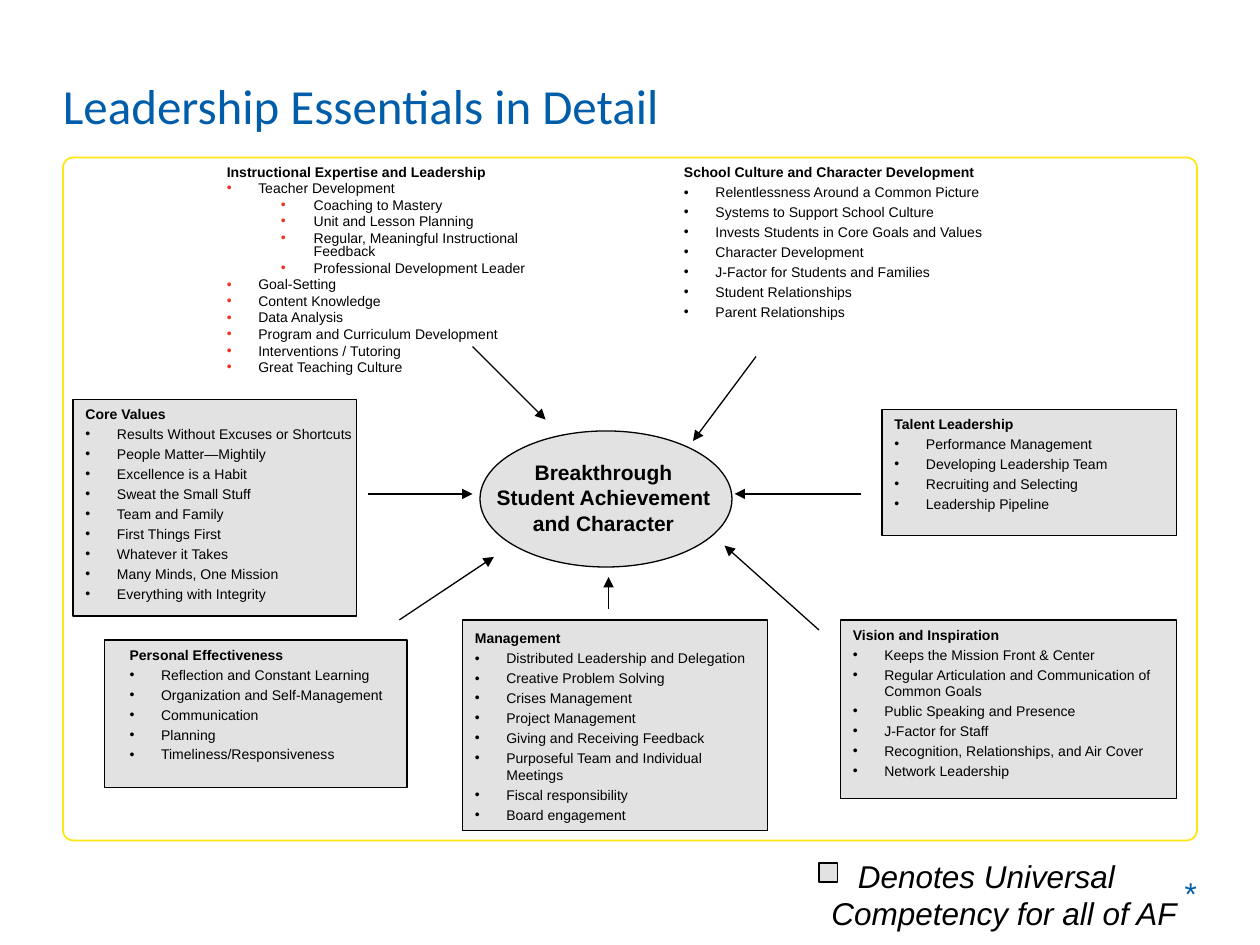
from dataclasses import dataclass

import pptx
import pptx.dml.color
import pptx.enum.shapes
import pptx.enum.text
import pptx.oxml.ns
import pptx.util
from lxml import etree

Inches = pptx.util.Inches
Pt = pptx.util.Pt
Shape = pptx.enum.shapes.MSO_SHAPE
Align = pptx.enum.text.PP_ALIGN
Anchor = pptx.enum.text.MSO_ANCHOR


@dataclass(frozen=True)
class Theme:
    blue: str = "005DAA"
    yellow: str = "FFE512"
    red: str = "EE3224"
    black: str = "000000"
    grey: str = "E2E2E2"
    heading_font: str = "Calibri"
    body_font: str = "Arial"
    title_size: float = 28
    note_size: float = 18
    goal_size: float = 12
    list_size: float = 8
    list_gap: float = 1.8
    outline: float = 0.75
    frame_line: float = 1


THEME = Theme()
INSETS = (0.1, 0.05, 0.1, 0.05)
TITLE_INSETS = (0, 0.05, 0, 0.05)

# Each competency: panel box, text box relative to the panel, heading, items
UNIVERSAL = [
    ((7, 3.25, 2.34, 1), (0, 0, 2.42, 1.33), "Talent Leadership", [
        "Performance Management", "Developing Leadership Team",
        "Recruiting and Selecting", "Leadership Pipeline"]),
    ((6.67, 4.92, 2.67, 1.42), (0, 0, 2.67, 1.01), "Vision and Inspiration", [
        "Keeps the Mission Front & Center",
        "Regular Articulation and Communication of Common Goals",
        "Public Speaking and Presence", "J-Factor for Staff",
        "Recognition, Relationships, and Air Cover", "Network Leadership"]),
    ((0.83, 5.08, 2.4, 1.17), (0.1, 0, 2.49, 1.11), "Personal Effectiveness", [
        "Reflection and Constant Learning", "Organization and Self-Management",
        "Communication", "Planning", "Timeliness/Responsiveness"]),
    ((0.58, 3.17, 2.25, 1.72), (0, 0, 2.5, 1.72), "Core Values", [
        "Results Without Excuses or Shortcuts", "People Matter—Mightily",
        "Excellence is a Habit", "Sweat the Small Stuff", "Team and Family",
        "First Things First", "Whatever it Takes", "Many Minds, One Mission",
        "Everything with Integrity"]),
    ((3.67, 4.92, 2.42, 1.67), (0, 0.03, 2.42, 1.39), "Management", [
        "Distributed Leadership and Delegation", "Creative Problem Solving",
        "Crises Management", "Project Management",
        "Giving and Receiving Feedback",
        "Purposeful Team and Individual Meetings",
        "Fiscal responsibility", "Board engagement"]),
]
# A nested list holds the sub-items of the item before it
INSTRUCTION = [
    "Teacher Development",
    ["Coaching to Mastery", "Unit and Lesson Planning",
     "Regular, Meaningful Instructional Feedback",
     "Professional Development Leader"],
    "Goal-Setting", "Content Knowledge", "Data Analysis",
    "Program and Curriculum Development", "Interventions / Tutoring",
    "Great Teaching Culture"]
CULTURE = [
    "Relentlessness Around a Common Picture",
    "Systems to Support School Culture",
    "Invests Students in Core Goals and Values", "Character Development",
    "J-Factor for Students and Families", "Student Relationships",
    "Parent Relationships"]
ARROWS = [
    ((6.83, 3.92), (5.83, 3.92)), ((6.5, 5), (5.75, 4.33)),
    ((4.83, 4.83), (4.83, 4.58)), ((3.17, 4.92), (3.92, 4.42)),
    ((2.92, 3.92), (3.75, 3.92)), ((3.75, 2.75), (4.33, 3.33)),
    ((6, 2.83), (5.5, 3.5))]


def rgb(value):
    return pptx.dml.color.RGBColor.from_string(value)


def within(box, offset):
    """Turn an offset box (left, top, width, height) into slide inches."""
    return (box[0] + offset[0], box[1] + offset[1], offset[2], offset[3])


def add_outline(slide, kind, box, fill=None, line=THEME.black,
                width=THEME.outline):
    outline = slide.shapes.add_shape(kind, *map(Inches, box))
    outline.shadow.inherit = False
    if fill:
        outline.fill.solid()
        outline.fill.fore_color.rgb = rgb(fill)
    else:
        outline.fill.background()
    outline.line.color.rgb = rgb(line)
    outline.line.width = Pt(width)
    return outline


def add_frame(slide, box, insets=INSETS, anchor=Anchor.TOP):
    frame = slide.shapes.add_textbox(*map(Inches, box)).text_frame
    frame.word_wrap = True
    frame.vertical_anchor = anchor
    (frame.margin_left, frame.margin_top,
     frame.margin_right, frame.margin_bottom) = map(Inches, insets)
    return frame


def add_run(paragraph, text, size, color=THEME.black, font=THEME.body_font,
            bold=False, italic=False):
    run = paragraph.add_run()
    run.text = text
    run.font.size = Pt(size)
    run.font.name = font
    run.font.bold = bold
    run.font.italic = italic
    run.font.color.rgb = rgb(color)


def indent(paragraph, left, first):
    properties = paragraph._p.get_or_add_pPr()
    properties.set("marL", str(Inches(left)))
    properties.set("indent", str(Inches(first)))
    return properties


def add_bullet(properties, color):
    qn = pptx.oxml.ns.qn
    bullet_color = etree.SubElement(properties, qn("a:buClr"))
    etree.SubElement(bullet_color, qn("a:srgbClr"), val=color)
    etree.SubElement(properties, qn("a:buFont"), typeface=THEME.body_font)
    etree.SubElement(properties, qn("a:buChar"), char="•")


def add_list(slide, box, items, heading=None, bullet=THEME.black, spacing=None,
             insets=INSETS):
    """Place an optional bold heading and its bulleted items in one box."""
    frame = add_frame(slide, box, insets)
    rows = [(heading, 0, False)] if heading else []
    for item in items:
        if isinstance(item, list):
            rows += [(sub_item, 1, True) for sub_item in item]
        else:
            rows.append((item, 0, True))
    for index, (text, level, bulleted) in enumerate(rows):
        row = frame.add_paragraph() if index else frame.paragraphs[0]
        row.level = level
        if spacing:
            row.line_spacing = spacing
        if index:
            row.space_before = Pt(THEME.list_gap)
        properties = indent(row, *((0.69, -0.26) if level else (0.25, -0.25)))
        if bulleted:
            add_bullet(properties, bullet)
        add_run(row, text, THEME.list_size, bold=not bulleted)


def add_universal_panel(slide, box, text_offset, heading, items):
    add_outline(slide, Shape.RECTANGLE, box, THEME.grey)
    add_list(slide, within(box, text_offset), items, heading)


def add_culture(slide, box):
    heading = add_frame(slide, within(box, (0, 0, 3.83, 0.44))).paragraphs[0]
    add_run(heading, "School Culture and Character Development",
            THEME.list_size, bold=True)
    add_list(slide, within(box, (0, 0.16, 3.15, 1.83)), CULTURE)


def add_goal(slide, box):
    add_outline(slide, Shape.OVAL, within(box, (0.06, 0, 2, 1.08)), THEME.grey)
    goal = add_frame(slide, within(box, (0, 0.18, 2.08, 0.7))).paragraphs[0]
    goal.alignment = Align.CENTER
    add_run(goal, "Breakthrough", THEME.goal_size, bold=True)
    goal.add_line_break()
    add_run(goal, "Student Achievement and Character", THEME.goal_size, bold=True)


def add_arrow(slide, start, end):
    arrow = slide.shapes.add_connector(
        pptx.enum.shapes.MSO_CONNECTOR.STRAIGHT, *map(Inches, start + end))
    arrow.line.color.rgb = rgb(THEME.black)
    arrow.line.width = Pt(THEME.outline)
    qn = pptx.oxml.ns.qn
    etree.SubElement(arrow.line._get_or_add_ln(), qn("a:tailEnd"), type="triangle")
    etree.SubElement(arrow._element.spPr, qn("a:effectLst"))


def add_legend(slide, box):
    note = add_frame(slide, box).paragraphs[0]
    indent(note, 0, 0.21)
    add_run(note, "Denotes Universal Competency for all of AF",
            THEME.note_size, italic=True)
    add_outline(slide, Shape.RECTANGLE, within(box, (0, 0.1, 0.15, 0.15)), THEME.grey)


def add_page_furniture(slide, box):
    """Place the title, the rounded frame and the corner mark."""
    border = add_outline(slide, Shape.ROUNDED_RECTANGLE,
                         within(box, (0, 0.7, 9, 5.42)),
                         line=THEME.yellow, width=THEME.frame_line)
    border.adjustments[0] = 0.015
    mark = add_frame(slide, within(box, (6.67, 6.28, 2.33, 0.52)),
                     (0.1, 0.05, 0, 0.05), Anchor.MIDDLE).paragraphs[0]
    mark.alignment = Align.RIGHT
    add_run(mark, "*", THEME.note_size, THEME.blue)
    title = add_frame(slide, within(box, (0, 0, 9, 0.53)), TITLE_INSETS).paragraphs[0]
    add_run(title, "Leadership Essentials in Detail", THEME.title_size,
            THEME.blue, THEME.heading_font)


def main():
    deck = pptx.Presentation()
    deck.slide_width, deck.slide_height = Inches(10), Inches(7.5)
    slide = deck.slides.add_slide(deck.slide_layouts[6])
    add_page_furniture(slide, (0.5, 0.55, 9, 6.8))
    add_list(slide, (1.5, 1.17, 3.17, 1.92), INSTRUCTION,
             "Instructional Expertise and Leadership", THEME.red, 0.8,
             (0.3, 0.15, 0.1, 0.05))
    for panel in UNIVERSAL:
        add_universal_panel(slide, *panel)
    add_goal(slide, (3.75, 3.42, 2.08, 1.08))
    for start, end in ARROWS:
        add_arrow(slide, start, end)
    add_legend(slide, (6.5, 6.75, 3.17, 0.27))
    add_culture(slide, (5.33, 1.25, 3.83, 1.99))
    deck.save("out.pptx")


if __name__ == "__main__":
    main()
